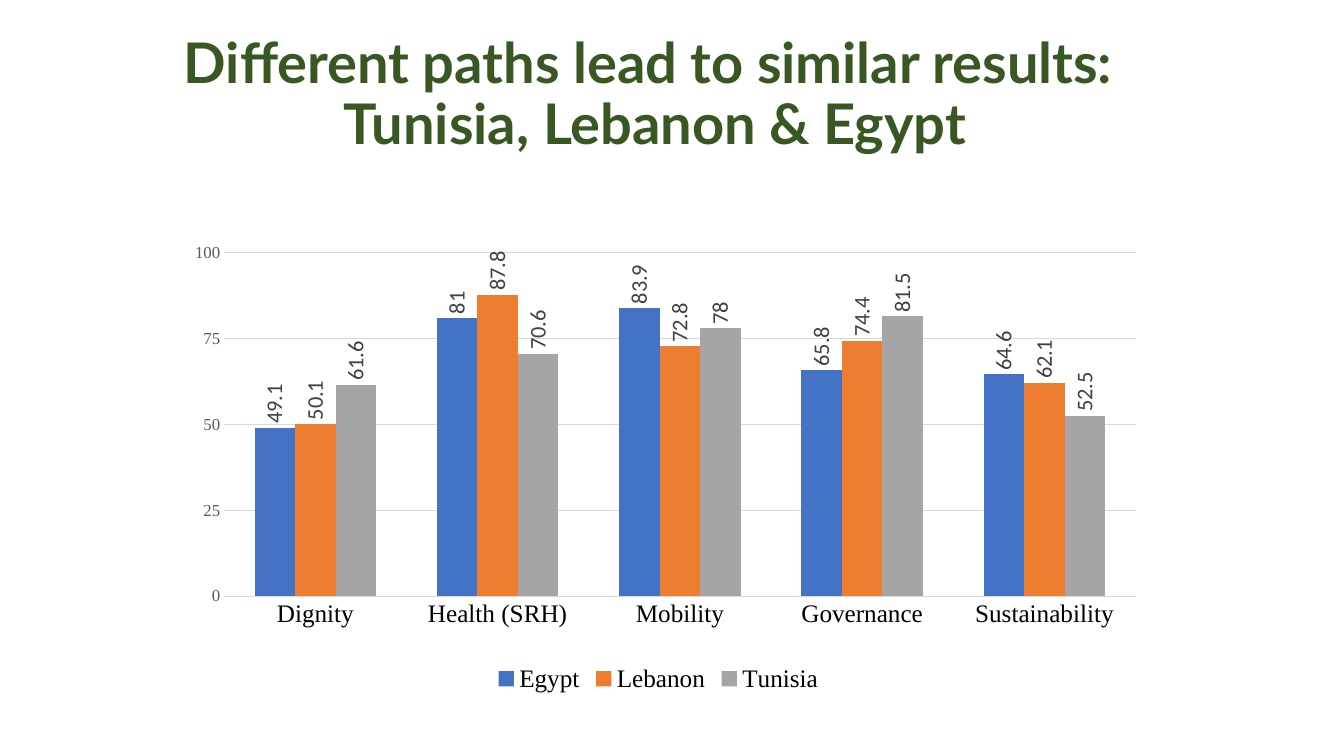
from lxml import etree
from pptx import Presentation
from pptx.chart.data import CategoryChartData
from pptx.dml.color import RGBColor
from pptx.enum.chart import XL_CHART_TYPE, XL_LABEL_POSITION, XL_LEGEND_POSITION, XL_TICK_MARK
from pptx.enum.text import MSO_ANCHOR, PP_ALIGN
from pptx.oxml.ns import qn
from pptx.util import Inches, Pt

COLUMNS = XL_CHART_TYPE.COLUMN_CLUSTERED
OUTSIDE_END = XL_LABEL_POSITION.OUTSIDE_END
LEGEND_BOTTOM = XL_LEGEND_POSITION.BOTTOM
NO_TICK = XL_TICK_MARK.NONE
MIDDLE = MSO_ANCHOR.MIDDLE
CENTER = PP_ALIGN.CENTER

GREEN = RGBColor(0x38, 0x57, 0x23)
BLACK = RGBColor(0x00, 0x00, 0x00)
AXIS_GREY = RGBColor(0x59, 0x59, 0x59)
LABEL_GREY = RGBColor(0x40, 0x40, 0x40)
GRID_GREY = RGBColor(0xD9, 0xD9, 0xD9)
BLUE = RGBColor(0x44, 0x72, 0xC4)
ORANGE = RGBColor(0xED, 0x7D, 0x31)
GREY = RGBColor(0xA5, 0xA5, 0xA5)

SERIF = "Times New Roman"
TITLE = "Different paths lead to similar results: \vTunisia, Lebanon & Egypt"
TITLE_BOX = (0.92, 0.4, 11.15, 1.1)
CHART_BOX = (1.44, 1.97, 10.18, 4.95)
PLOT_AREA = {"x": 0.077, "y": 0.109, "w": 0.888, "h": 0.688}
CATEGORIES = ["Dignity", "Health (SRH)", "Mobility", "Governance", "Sustainability"]
COUNTRIES = [
    ("Egypt", BLUE, (49.1, 81, 83.9, 65.8, 64.6)),
    ("Lebanon", ORANGE, (50.1, 87.8, 72.8, 74.4, 62.1)),
    ("Tunisia", GREY, (61.6, 70.6, 78, 81.5, 52.5)),
]


def style_font(font, name, size, color, bold=False):
    font.name = name
    font.size = Pt(size)
    font.bold = bold
    font.color.rgb = color


def style_line(line):
    line.color.rgb = GRID_GREY
    line.width = Pt(0.75)


def add_title(slide):
    text_frame = slide.shapes.add_textbox(*map(Inches, TITLE_BOX)).text_frame
    text_frame.word_wrap = True
    text_frame.vertical_anchor = MIDDLE
    text_frame.text = TITLE
    paragraph = text_frame.paragraphs[0]
    paragraph.alignment = CENTER
    paragraph.line_spacing = 0.9
    for run in paragraph.runs:
        style_font(run.font, "Lato", 40, GREEN, bold=True)


def place_plot_area(chart):
    """Fix the inner plot area as fractions of the chart."""
    plot_area = chart._chartSpace.chart.plotArea
    for old_layout in plot_area.findall(qn("c:layout")):
        plot_area.remove(old_layout)
    layout = etree.Element(qn("c:layout"))
    plot_area.insert(0, layout)
    manual = etree.SubElement(layout, qn("c:manualLayout"))
    settings = [("layoutTarget", "inner"), ("xMode", "edge"), ("yMode", "edge")]
    for tag, value in settings + list(PLOT_AREA.items()):
        etree.SubElement(manual, qn(f"c:{tag}")).set("val", str(value))


def style_axes(chart):
    category_axis, value_axis = chart.category_axis, chart.value_axis
    for axis in (category_axis, value_axis):
        axis.major_tick_mark = NO_TICK
        axis.minor_tick_mark = NO_TICK
    style_font(category_axis.tick_labels.font, SERIF, 18, BLACK)
    style_line(category_axis.format.line)
    style_font(value_axis.tick_labels.font, SERIF, 12, AXIS_GREY)
    value_axis.format.line.fill.background()
    value_axis.minimum_scale = 0
    value_axis.maximum_scale = 100
    value_axis.major_unit = 25
    style_line(value_axis.major_gridlines.format.line)


def style_series(series, color):
    series.format.fill.solid()
    series.format.fill.fore_color.rgb = color
    labels = series.data_labels
    labels.show_value = True
    labels.position = OUTSIDE_END
    style_font(labels.font, "Calibri", 16, LABEL_GREY)
    body = labels._element.find(f"{qn('c:txPr')}/{qn('a:bodyPr')}")
    body.set("rot", "-5400000")
    body.set("vert", "horz")


def add_country_chart(slide):
    chart_data = CategoryChartData()
    chart_data.categories = CATEGORIES
    for name, _, values in COUNTRIES:
        chart_data.add_series(name, values)
    chart = slide.shapes.add_chart(COLUMNS, *map(Inches, CHART_BOX), chart_data).chart
    style_font(chart.font, "Calibri", 10, BLACK)
    chart.has_title = False
    chart.has_legend = True
    chart.legend.position = LEGEND_BOTTOM
    chart.legend.include_in_layout = False
    style_font(chart.legend.font, SERIF, 18, BLACK)
    plot = chart.plots[0]
    plot.gap_width = 150
    plot.overlap = 0
    plot.vary_by_categories = False
    for series, (_, color, _) in zip(plot.series, COUNTRIES):
        style_series(series, color)
    style_axes(chart)
    place_plot_area(chart)


def main():
    presentation = Presentation()
    presentation.slide_width = Inches(13.33)
    presentation.slide_height = Inches(7.5)
    slide = presentation.slides.add_slide(presentation.slide_layouts[6])
    add_title(slide)
    add_country_chart(slide)
    presentation.save("out.pptx")


if __name__ == "__main__":
    main()
